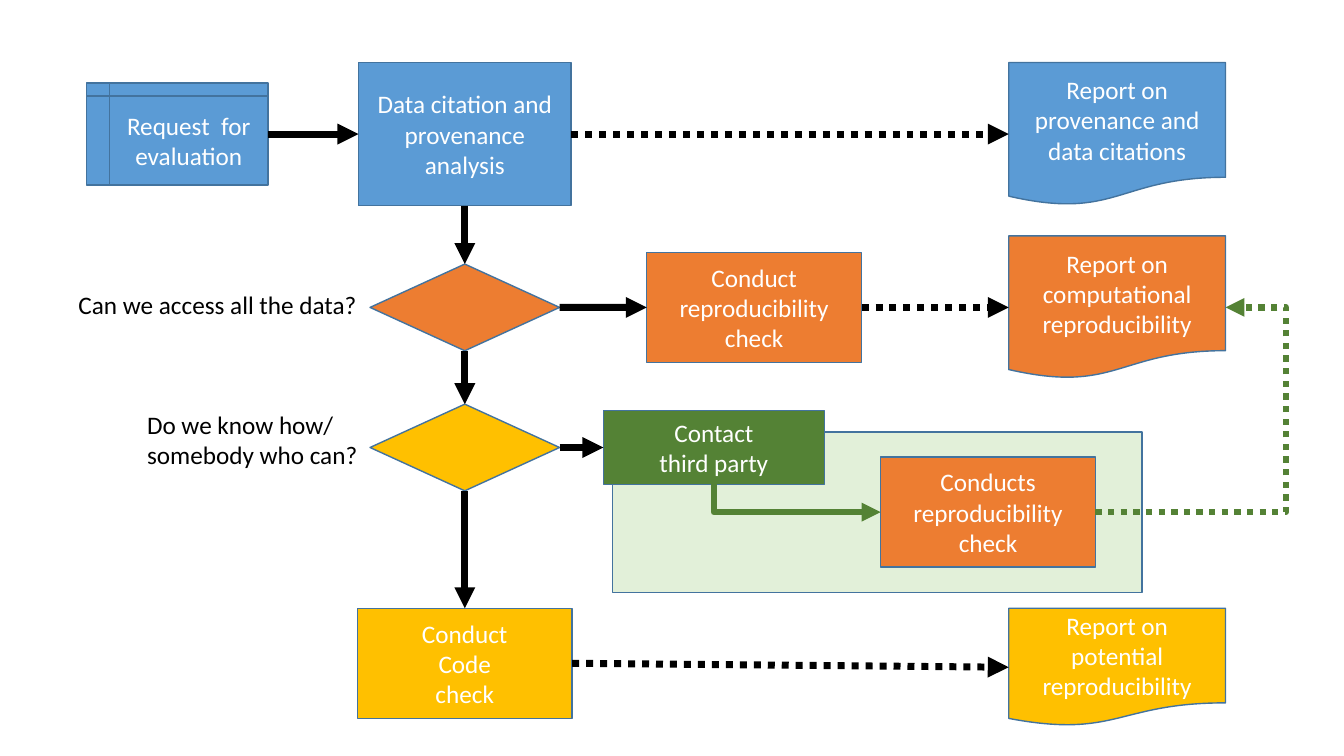
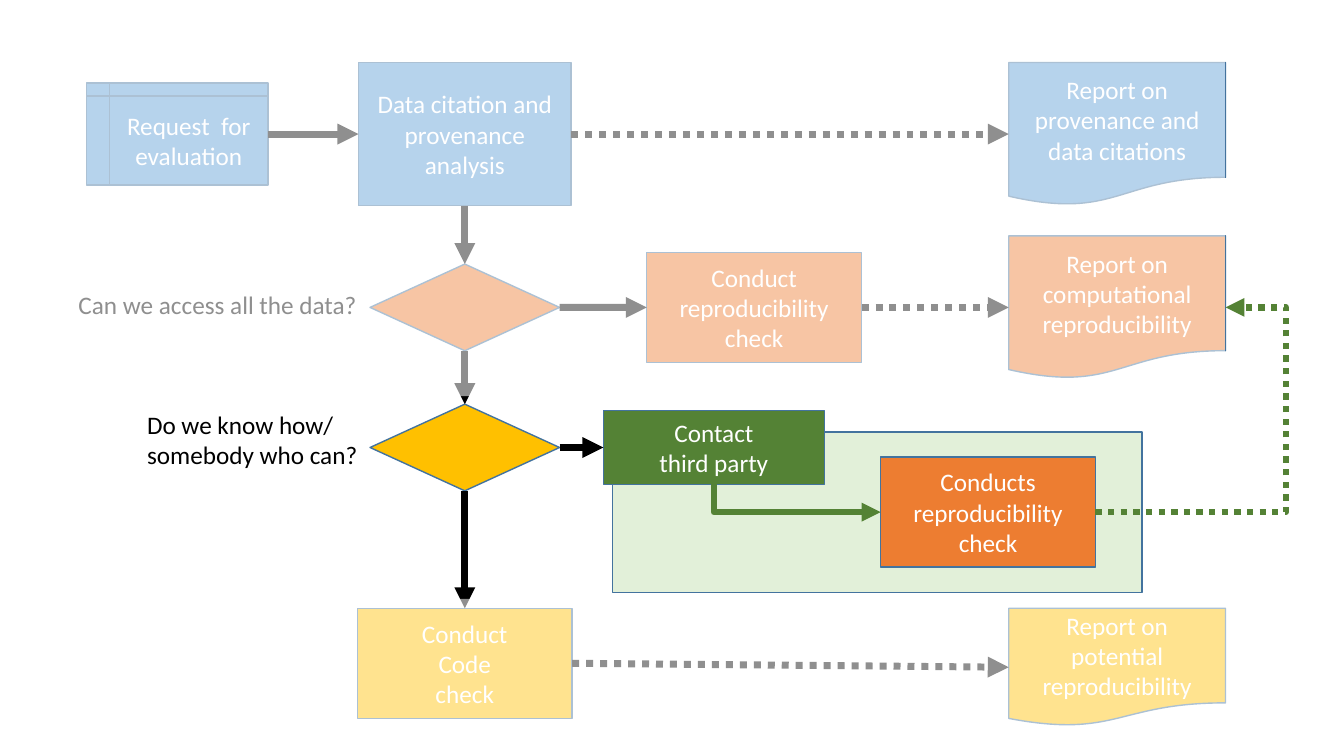
"""Two slides of a reproducibility workflow: the whole chart, then the third-party branch in focus."""
from lxml import etree
from pptx import Presentation
from pptx.dml.color import RGBColor
from pptx.enum.dml import MSO_LINE
from pptx.enum.shapes import MSO_CONNECTOR, MSO_SHAPE
from pptx.enum.text import MSO_AUTO_SIZE, PP_ALIGN
from pptx.oxml.ns import qn
from pptx.util import Inches, Pt

BLACK = RGBColor(0x00, 0x00, 0x00)
WHITE = RGBColor(0xFF, 0xFF, 0xFF)
BLUE = RGBColor(0x5B, 0x9B, 0xD5)
ORANGE = RGBColor(0xED, 0x7D, 0x31)
YELLOW = RGBColor(0xFF, 0xC0, 0x00)
GREEN = RGBColor(0x54, 0x82, 0x35)
PALE_GREEN = RGBColor(0xE2, 0xF0, 0xD9)
OUTLINE = RGBColor(0x43, 0x73, 0x9E)

PROCESS = MSO_SHAPE.FLOWCHART_PROCESS
DECISION = MSO_SHAPE.FLOWCHART_DECISION
DOCUMENT = MSO_SHAPE.FLOWCHART_DOCUMENT
STORAGE = MSO_SHAPE.FLOWCHART_INTERNAL_STORAGE
RECTANGLE = MSO_SHAPE.RECTANGLE
STRAIGHT, ELBOW = MSO_CONNECTOR.STRAIGHT, MSO_CONNECTOR.ELBOW
DOTTED, SOLID = MSO_LINE.ROUND_DOT, MSO_LINE.SOLID
CENTER = PP_ALIGN.CENTER
FIT_SHAPE = MSO_AUTO_SIZE.SHAPE_TO_FIT_TEXT
TOP, LEFT, BOTTOM, RIGHT = range(4)

FONT, TEXT_SIZE = "Calibri", Pt(18)

START_COL, MAIN_COL, CHECK_COL, REPORT_COL = 1.76, 4.61, 7.48, 11.08
CITATION_ROW, DATA_ROW, CONTACT_ROW, PARTY_ROW, CODE_ROW = 1.33, 3.05, 4.44, 5.08, 6.58
CARD, GATE, REPORT = (2.13, 1.09), (1.88, 0.86), (2.15, 1.42)

STEPS = {
    "panel": (PROCESS, 8.7, PARTY_ROW, (5.25, 1.59), PALE_GREEN, ""),
    "request": (STORAGE, START_COL, CITATION_ROW, (1.8, 1.01), BLUE, "Request  for evaluation"),
    "citation": (PROCESS, MAIN_COL, CITATION_ROW, (2.11, 1.42), BLUE,
                 "Data citation and provenance analysis"),
    "citation report": (DOCUMENT, REPORT_COL, CITATION_ROW, REPORT, BLUE,
                        "Report on\nprovenance and data citations"),
    "data gate": (DECISION, MAIN_COL, DATA_ROW, GATE, ORANGE, ""),
    "data check": (PROCESS, CHECK_COL, DATA_ROW, CARD, ORANGE, "Conduct reproducibility check"),
    "data report": (DOCUMENT, REPORT_COL, DATA_ROW, REPORT, ORANGE,
                    "Report on\ncomputational reproducibility"),
    "skill gate": (DECISION, MAIN_COL, CONTACT_ROW, GATE, YELLOW, ""),
    "contact": (PROCESS, 7.08, CONTACT_ROW, (2.19, 0.73), GREEN, "Contact\nthird party"),
    "party check": (PROCESS, 9.8, PARTY_ROW, CARD, ORANGE, "Conducts reproducibility check"),
    "code check": (PROCESS, MAIN_COL, CODE_ROW, CARD, YELLOW, "Conduct\nCode\ncheck"),
    "code report": (DOCUMENT, REPORT_COL, 6.62, (2.15, 1.17), YELLOW,
                    "Report on\npotential reproducibility"),
}
QUESTIONS = [
    (0.68, 2.82, 2.99, 0.4, "Can we access all the data?"),
    (1.36, 4.01, 2.31, 0.71, "Do we know how/\nsomebody who can?"),
]
ARROWS = [
    ("request", RIGHT, "citation", LEFT, SOLID),
    ("citation", BOTTOM, "data gate", TOP, SOLID),
    ("data gate", BOTTOM, "skill gate", TOP, SOLID),
    ("skill gate", BOTTOM, "code check", TOP, SOLID),
    ("data gate", RIGHT, "data check", LEFT, SOLID),
    ("skill gate", RIGHT, "contact", LEFT, SOLID),
    ("data check", RIGHT, "data report", LEFT, DOTTED),
    ("citation", RIGHT, "citation report", LEFT, DOTTED),
    ("code check", RIGHT, "code report", LEFT, DOTTED),
    ("contact", BOTTOM, "party check", LEFT, SOLID),
    ("party check", RIGHT, "data report", RIGHT, DOTTED),
]
VEILS = [[], [(0.59, 0.16, 11.56, 3.77), (0.93, 5.94, 11.56, 1.35)]]
VEIL_OPACITY = 56000
DETOUR = 146500


def write(frame, text, color, align=None):
    frame.text = text
    for paragraph in frame.paragraphs:
        paragraph.alignment = align
        paragraph.font.name, paragraph.font.size = FONT, TEXT_SIZE
        paragraph.font.color.rgb = color


def join(slide, kind, start, start_side, end, end_side, color, width, dash):
    arrow = slide.shapes.add_connector(kind, 0, 0, 0, 0)
    arrow.begin_connect(start, start_side)
    arrow.end_connect(end, end_side)
    arrow.line.color.rgb, arrow.line.width, arrow.line.dash_style = color, width, dash
    etree.SubElement(arrow.line._get_or_add_ln(), qn("a:tailEnd"), type="triangle")
    etree.SubElement(arrow._element.spPr, qn("a:effectLst"))
    return arrow


deck = Presentation()
deck.slide_width, deck.slide_height = Inches(13.33), Inches(7.5)

for veils in VEILS:
    slide = deck.slides.add_slide(deck.slide_layouts[6])

    for *box, question in QUESTIONS:
        label = slide.shapes.add_textbox(*map(Inches, box))
        label.text_frame.word_wrap = False
        label.text_frame.auto_size = FIT_SHAPE
        write(label.text_frame, question, BLACK)

    steps = {}
    for key, (outline, x, y, (width, height), color, text) in STEPS.items():
        step = slide.shapes.add_shape(outline, Inches(x - width / 2), Inches(y - height / 2),
                                      Inches(width), Inches(height))
        step.shadow.inherit = False
        step.fill.solid()
        step.fill.fore_color.rgb = color
        step.line.color.rgb, step.line.width = OUTLINE, Pt(1)
        if text:
            write(step.text_frame, text, WHITE, CENTER)
        steps[key] = step

    for start, start_side, end, end_side, dash in ARROWS:
        third_party = start in ("contact", "party check")
        kind, color, width = (ELBOW, GREEN, Pt(4.5)) if third_party else (STRAIGHT, BLACK, Pt(5))
        arrow = join(slide, kind, steps[start], start_side, steps[end], end_side,
                     color, width, dash)
        geometry = arrow._element.spPr.find(qn("a:prstGeom"))
        if start == "party check":
            etree.SubElement(geometry.find(qn("a:avLst")), qn("a:gd"),
                             name="adj1", fmla=f"val {DETOUR}")
        elif start == "contact":
            geometry.set("prst", "bentConnector2")
            across, down = arrow.width, arrow.height
            arrow.left += (across - down) // 2
            arrow.top += (down - across) // 2
            arrow.width, arrow.height = down, across
            turn = arrow._element.spPr.find(qn("a:xfrm"))
            turn.set("rot", "16200000")
            turn.set("flipH", "1")

    for box in veils:
        veil = slide.shapes.add_shape(RECTANGLE, *map(Inches, box))
        veil.shadow.inherit = False
        veil.fill.solid()
        veil.fill.fore_color.rgb = WHITE
        veil.line.fill.background()
        tint = veil._element.spPr.find(qn("a:solidFill")).find(qn("a:srgbClr"))
        etree.SubElement(tint, qn("a:alpha"), val=str(VEIL_OPACITY))

deck.save("out.pptx")
